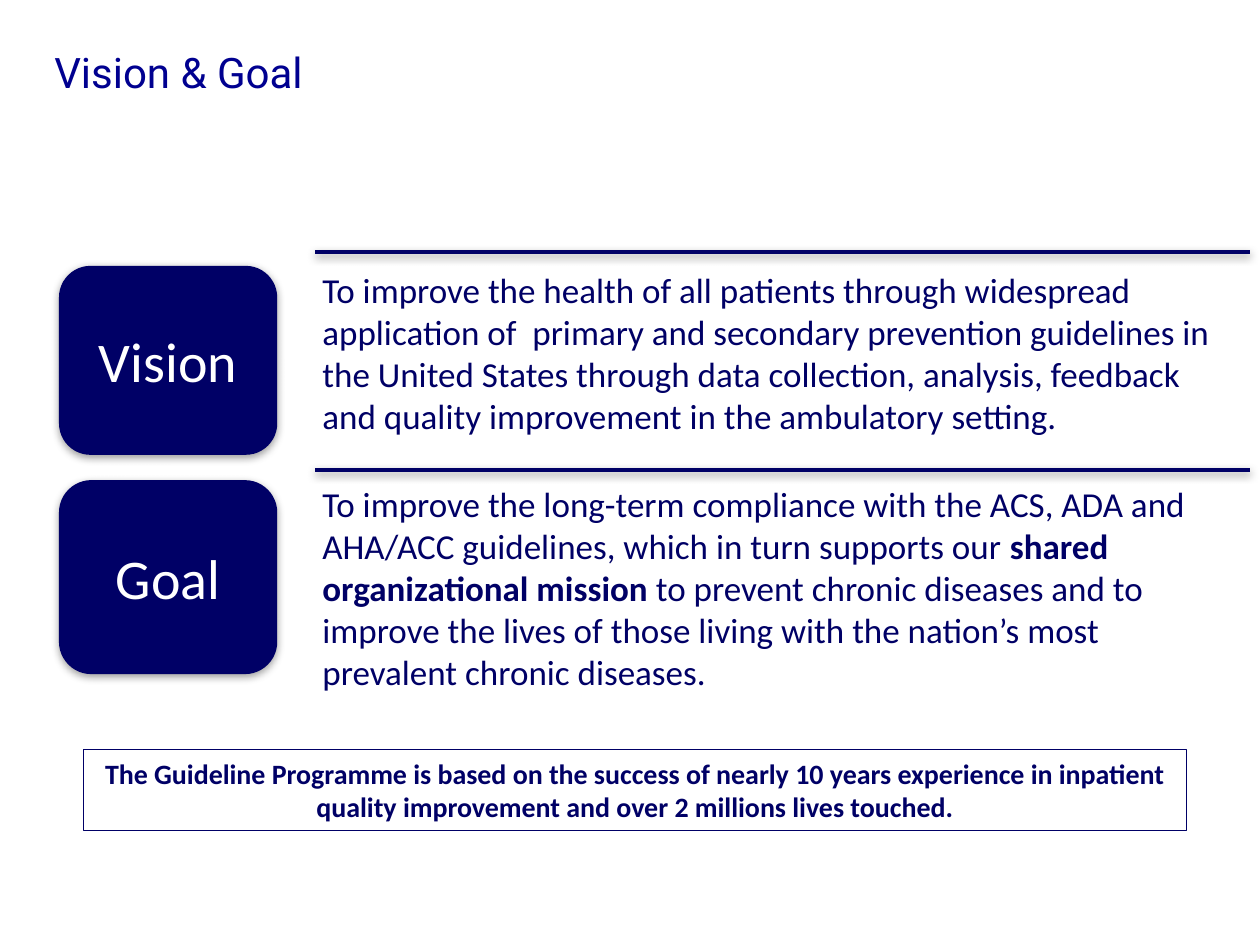
import dataclasses
import typing

import pptx
import pptx.dml.color
import pptx.enum.shapes
import pptx.enum.text
import pptx.oxml
import pptx.oxml.ns
import pptx.presentation
import pptx.slide
import pptx.util
from pptx.util import Cm

NAVY = pptx.dml.color.RGBColor(0x00, 0x00, 0x66)
TITLE_BLUE = pptx.dml.color.RGBColor(0x00, 0x00, 0x90)
WHITE = pptx.dml.color.RGBColor(0xFF, 0xFF, 0xFF)

BODY_FONT = "Calibri"
TITLE_FONT = "Roboto"
SHADOW_XML = (
    f'<a:effectLst {pptx.oxml.ns.nsdecls("a")}>'
    '<a:outerShdw blurRad="63500" dist="20320" dir="5400000" rotWithShape="0">'
    '<a:srgbClr val="000000"><a:alpha val="38000"/></a:srgbClr>'
    "</a:outerShdw></a:effectLst>"
)


class Run(typing.NamedTuple):
    text: str
    bold: bool = False


@dataclasses.dataclass(frozen=True)
class Statement:
    label: str
    runs: tuple[Run, ...]
    rule_top: float
    label_top: float
    label_height: float
    text_top: float


STATEMENTS = (
    Statement(
        "Vision",
        (
            Run(
                "To improve the health of all patients through widespread "
                "application of  primary and secondary prevention guidelines in "
                "the United States through data collection, analysis, feedback "
                "and quality improvement in the ambulatory setting."
            ),
        ),
        rule_top=5.08, label_top=5.36, label_height=3.81, text_top=5.28,
    ),
    Statement(
        "Goal",
        (
            Run(
                "To improve the long-term compliance with the ACS, ADA and "
                "AHA/ACC guidelines, which in turn supports our "
            ),
            Run("shared organizational mission", bold=True),
            Run(
                " to prevent chronic diseases and to improve the lives of those "
                "living with the nation’s most prevalent chronic diseases."
            ),
        ),
        rule_top=9.47, label_top=9.68, label_height=3.91, text_top=9.6,
    ),
)


def add_shadow(shape: typing.Any) -> None:
    """Put a soft shadow straight below a shape or connector."""
    shape._element.spPr.append(pptx.oxml.parse_xml(SHADOW_XML))


def format_paragraph(
    paragraph: typing.Any,
    size: float,
    color: pptx.dml.color.RGBColor,
    name: str = BODY_FONT,
    alignment: pptx.enum.text.PP_ALIGN = pptx.enum.text.PP_ALIGN.LEFT,
) -> None:
    paragraph.alignment = alignment
    paragraph.font.name = name
    paragraph.font.size = pptx.util.Pt(size)
    paragraph.font.color.rgb = color


def add_title(slide: pptx.slide.Slide, text: str) -> None:
    title = slide.shapes.title
    title.left, title.top = Cm(0.84), Cm(0.81)
    title.width, title.height = Cm(24.56), Cm(2.11)
    title.text_frame.text = text
    title.text_frame.vertical_anchor = pptx.enum.text.MSO_ANCHOR.TOP
    format_paragraph(title.text_frame.paragraphs[0], 24, TITLE_BLUE, TITLE_FONT)


def add_statement(slide: pptx.slide.Slide, statement: Statement) -> None:
    # Text beside the label
    box = slide.shapes.add_textbox(
        Cm(6.25), Cm(statement.text_top), Cm(18.85), Cm(4.52)
    )
    box.text_frame.word_wrap = True
    paragraph = box.text_frame.paragraphs[0]
    for part in statement.runs:
        run = paragraph.add_run()
        run.text = part.text
        run.font.bold = part.bold
    format_paragraph(paragraph, 20, NAVY)

    # Rule above the text
    rule = slide.shapes.add_connector(
        pptx.enum.shapes.MSO_CONNECTOR.STRAIGHT,
        Cm(6.35), Cm(statement.rule_top), Cm(25.2), Cm(statement.rule_top),
    )
    rule.line.color.rgb = NAVY
    rule.line.width = pptx.util.Pt(2)
    add_shadow(rule)

    # Rounded label
    label = slide.shapes.add_shape(
        pptx.enum.shapes.MSO_SHAPE.ROUNDED_RECTANGLE,
        Cm(1.19), Cm(statement.label_top), Cm(4.4), Cm(statement.label_height),
    )
    label.fill.solid()
    label.fill.fore_color.rgb = NAVY
    label.line.fill.background()
    add_shadow(label)
    label.text_frame.text = statement.label
    label.text_frame.vertical_anchor = pptx.enum.text.MSO_ANCHOR.MIDDLE
    format_paragraph(
        label.text_frame.paragraphs[0], 32, WHITE,
        alignment=pptx.enum.text.PP_ALIGN.CENTER,
    )


def add_callout(slide: pptx.slide.Slide, text: str) -> None:
    callout = slide.shapes.add_shape(
        pptx.enum.shapes.MSO_SHAPE.RECTANGLE,
        Cm(1.69), Cm(15.11), Cm(22.23), Cm(1.63),
    )
    callout.shadow.inherit = False
    callout.fill.background()
    callout.line.color.rgb = NAVY
    callout.line.width = pptx.util.Pt(0.75)
    callout.text_frame.word_wrap = True
    callout.text_frame.text = text
    paragraph = callout.text_frame.paragraphs[0]
    format_paragraph(
        paragraph, 16, NAVY, alignment=pptx.enum.text.PP_ALIGN.CENTER
    )
    paragraph.font.bold = True


def main() -> None:
    presentation = pptx.Presentation()
    presentation.slide_width, presentation.slide_height = Cm(25.4), Cm(19.05)
    slide = presentation.slides.add_slide(presentation.slide_layouts[5])

    add_title(slide, "Vision & Goal")
    for statement in STATEMENTS:
        add_statement(slide, statement)
    add_callout(
        slide,
        "The Guideline Programme is based on the success of nearly 10 years "
        "experience in inpatient quality improvement and over 2 millions lives "
        "touched.",
    )
    presentation.save("out.pptx")


if __name__ == "__main__":
    main()
